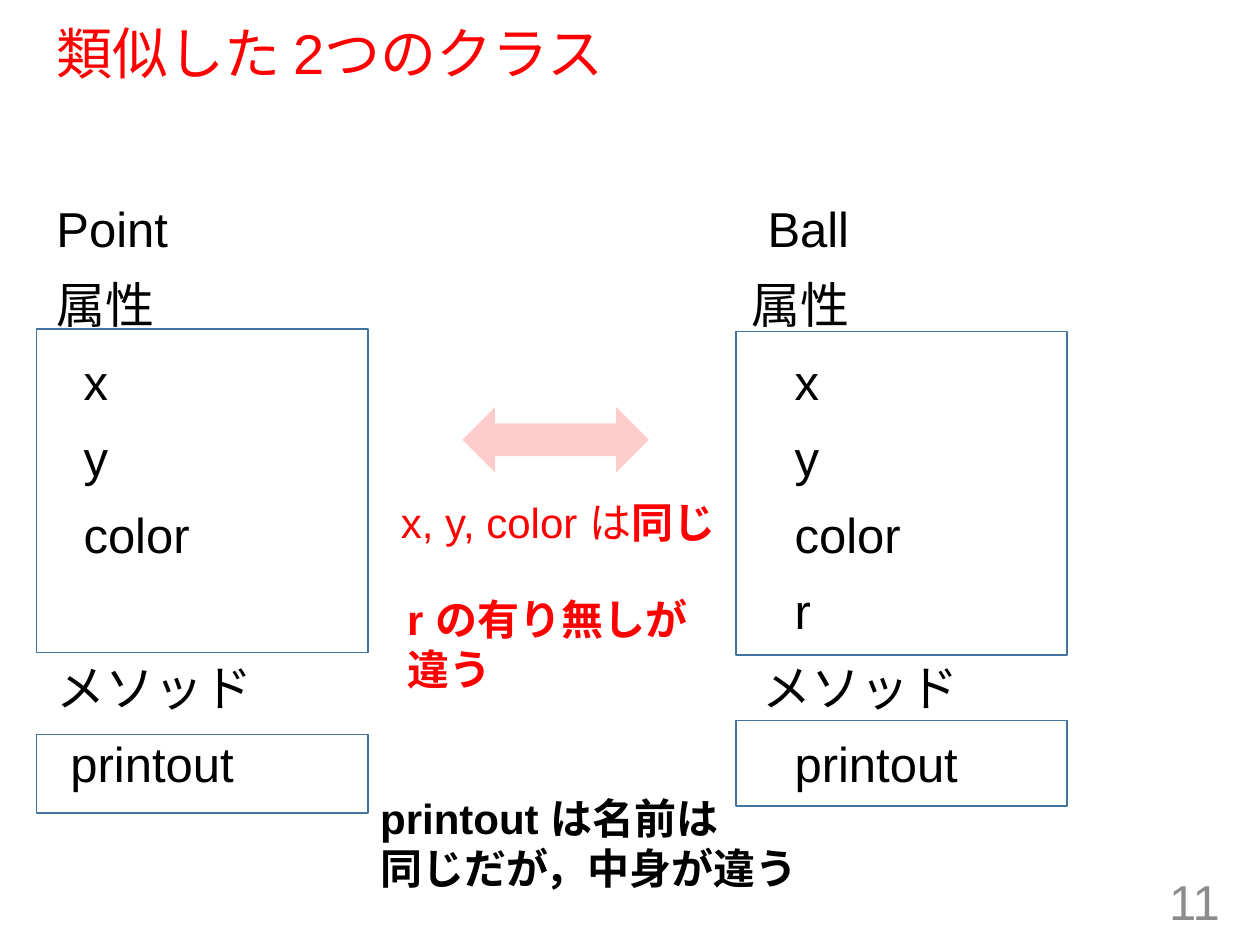
from dataclasses import dataclass

from lxml.etree import SubElement
from pptx import Presentation
from pptx.dml.color import RGBColor
from pptx.enum.shapes import MSO_SHAPE
from pptx.enum.text import MSO_ANCHOR, MSO_AUTO_SIZE, PP_ALIGN
from pptx.oxml.ns import qn
from pptx.util import Pt


@dataclass(frozen=True)
class Theme:
    font: str = "Arial"
    red: RGBColor = RGBColor(0xFF, 0x00, 0x00)
    black: RGBColor = RGBColor(0x00, 0x00, 0x00)
    gray: RGBColor = RGBColor(0x8C, 0x8C, 0x8C)
    outline: RGBColor = RGBColor(0x43, 0x73, 0x9E)
    title: int = 32
    body: int = 28
    note: int = 24
    row: float = 43.7


THEME = Theme()


def apply(target, values):
    for name, value in values.items():
        setattr(target, name, value)


def place(sp, box):
    apply(sp, dict(zip(("left", "top", "width", "height"), map(Pt, box))))


def add_run(p, text, size, color, bold=False):
    r = p.add_run()
    r.text = text
    apply(r.font, {"name": THEME.font, "size": Pt(size), "bold": bold})
    r.font.color.rgb = color


def add_text(slide, box, lines, size, color, anchor=MSO_ANCHOR.TOP):
    tf = slide.shapes.add_textbox(*map(Pt, box)).text_frame
    apply(tf, {"word_wrap": True, "vertical_anchor": anchor})
    for i, runs in enumerate(lines):
        p = tf.paragraphs[0] if i == 0 else tf.add_paragraph()
        for text, bold in runs:
            add_run(p, text, size, color, bold)
    return tf


def add_title(slide, box, text):
    sp = slide.shapes.title
    place(sp, box)
    tf = sp.text_frame
    apply(tf, {"word_wrap": True, "auto_size": MSO_AUTO_SIZE.NONE,
               "vertical_anchor": MSO_ANCHOR.MIDDLE})
    p = tf.paragraphs[0]
    apply(p, {"alignment": PP_ALIGN.LEFT, "line_spacing": 0.9})
    add_run(p, text, THEME.title, THEME.red)


def add_frame(slide, box):
    sp = slide.shapes.add_shape(MSO_SHAPE.RECTANGLE, *map(Pt, box))
    sp.shadow.inherit = False
    sp.fill.background()
    sp.line.color.rgb = THEME.outline
    sp.line.width = Pt(1)


def add_class(slide, box, text_left, frames, rows):
    left, top, width, height = box
    for offset, frame_height in frames:
        add_frame(slide, (left, top + offset, width, frame_height))
    tf = add_text(slide, (left + text_left, top, width, height),
                  [[(text, False)] for text, _, _ in rows],
                  THEME.body, THEME.black)
    for p, (_, indent, skipped) in zip(tf.paragraphs, rows):
        apply(p, {"line_spacing": Pt(THEME.row),
                  "space_before": Pt(skipped * THEME.row)})
        p._p.get_or_add_pPr().set("marL", str(Pt(indent)))


def add_double_arrow(slide, box):
    sp = slide.shapes.add_shape(MSO_SHAPE.LEFT_RIGHT_ARROW, *map(Pt, box))
    sp.shadow.inherit = False
    sp.fill.solid()
    sp.fill.fore_color.rgb = THEME.red
    color = sp.fill._xPr.find(qn("a:solidFill")).find(qn("a:srgbClr"))
    SubElement(color, qn("a:alpha"), val="20000")
    sp.line.fill.background()


def add_comparison(slide, box):
    left, top, _, _ = box
    add_double_arrow(slide, (left + 54, top, 106.6, 37.4))
    notes = [
        (11.8, 47.5, 212, 40, [[("x, y, color は", False), ("同じ", True)]], THEME.red),
        (15.4, 103, 195, 68, [[("r の有り無しが", True)], [("違う", True)]], THEME.red),
        (0, 216.7, 260, 68,
         [[("printout は名前は", True)], [("同じだが，中身が違う", True)]], THEME.black),
    ]
    for dx, dy, width, height, lines, color in notes:
        add_text(slide, (left + dx, top + dy, width, height), lines, THEME.note, color)


def add_page_number(slide, box, number):
    tf = add_text(slide, box, [[(number, False)]], THEME.body, THEME.gray,
                  MSO_ANCHOR.MIDDLE)
    tf.paragraphs[0].alignment = PP_ALIGN.RIGHT


def main():
    prs = Presentation()
    apply(prs, {"slide_width": Pt(720), "slide_height": Pt(540)})
    slide = prs.slides.add_slide(prs.slide_layouts[5])
    add_title(slide, (25.2, 13.7, 666, 36.7), "類似した 2つのクラス")
    add_class(slide, (20.9, 99.7, 189.4, 360), 4.3, [(88.2, 185), (320.1, 45)], [
        ("Point", 0, 0), ("属性", 0, 0), ("x", 15.5, 0), ("y", 15.5, 0),
        ("color", 15.5, 0), ("メソッド", 0, 1), ("printout", 8, 0)])
    add_class(slide, (420.5, 99.7, 189.4, 360), 2, [(89.7, 185), (312.1, 49)], [
        ("Ball", 9, 0), ("属性", 0, 0), ("x", 24.5, 0), ("y", 24.5, 0),
        ("color", 24.5, 0), ("r", 24.5, 0), ("メソッド", 6, 0), ("printout", 24.5, 0)])
    add_comparison(slide, (210.2, 232.6, 260, 285))
    add_page_number(slide, (542.2, 500.4, 162, 28.8), "11")
    prs.save("out.pptx")


if __name__ == "__main__":
    main()
